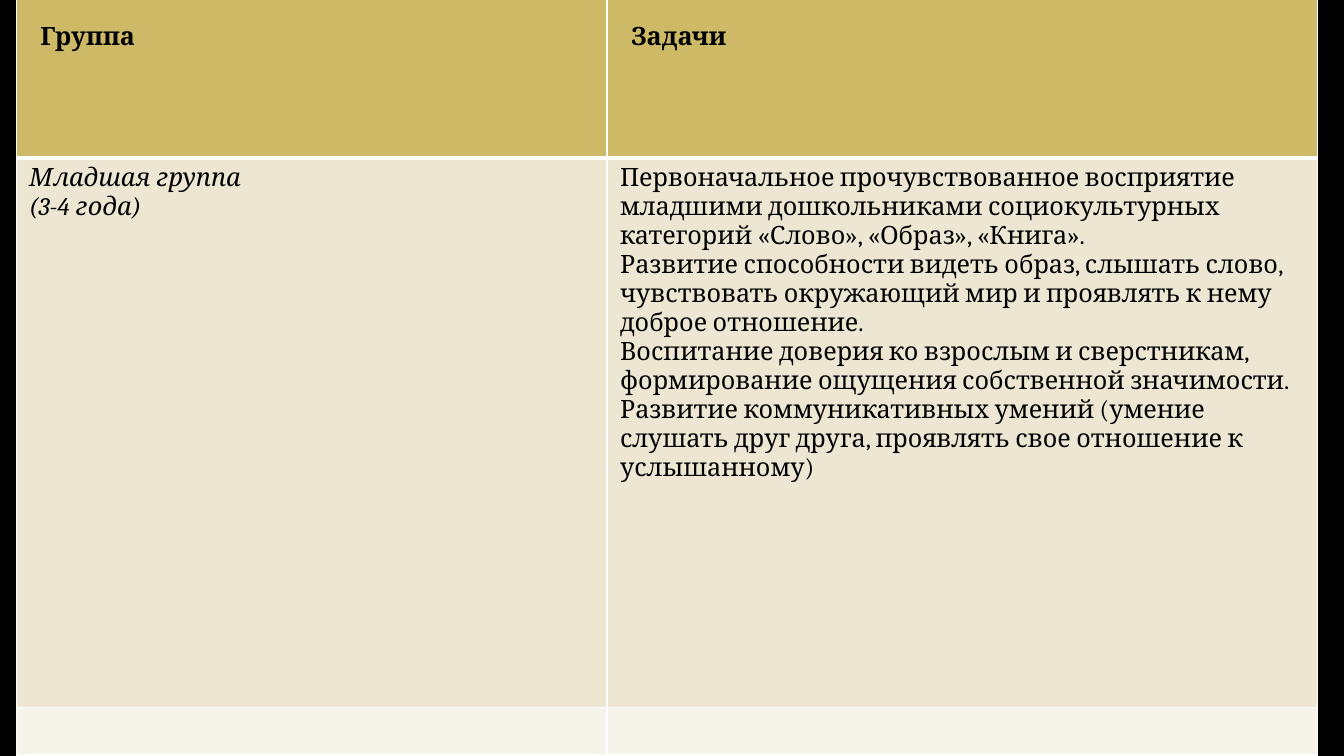
from dataclasses import dataclass

from lxml import etree
from pptx import Presentation
from pptx.dml.color import RGBColor
from pptx.oxml.ns import qn
from pptx.util import Inches, Pt


@dataclass(frozen=True)
class Theme:
    back: str = "000000"
    ink: str = "000000"
    rule: str = "FFFFFF"
    head: str = "CEB966"
    body: str = "EDE6D3"
    foot: str = "F6F3EA"
    font: str = "Cambria"
    size: int = 18
    thin: int = 1
    thick: int = 3


THEME = Theme()
COLS = (5.86, 7.05)
ROWS = (1.68, 5.45, 0.47)

HEADS = ("Группа", "Задачи")
GROUP = ("Младшая группа", "(3-4 года)")
TASKS = (
    "Первоначальное прочувствованное восприятие младшими дошкольниками "
    "социокультурных категорий «Слово», «Образ», «Книга».",
    "Развитие способности видеть образ, слышать слово, чувствовать "
    "окружающий мир и проявлять к нему доброе отношение.",
    "Воспитание доверия ко взрослым и сверстникам, формирование ощущения "
    "собственной значимости.",
    "Развитие коммуникативных умений (умение слушать друг друга, "
    "проявлять свое отношение к услышанному)",
)


def color(code):
    return RGBColor.from_string(code)


def add_rule(cell, side, width):
    """Draw one border of a cell."""
    props = cell._tc.get_or_add_tcPr()
    line = etree.SubElement(props, qn(f"a:ln{side}"), w=str(Pt(width)))
    fill = etree.SubElement(line, qn("a:solidFill"))
    etree.SubElement(fill, qn("a:srgbClr"), val=THEME.rule)


def style_cell(cell, fill, top=THEME.thin, base=THEME.thin):
    """Set the borders, fill and insets of a cell."""
    for side, width in zip("LRTB", (THEME.thin, THEME.thin, top, base)):
        add_rule(cell, side, width)
    cell.fill.solid()
    cell.fill.fore_color.rgb = color(fill)
    cell.margin_left = cell.margin_right = Inches(0.13)
    cell.margin_top = cell.margin_bottom = Inches(0.05)


def write_cell(cell, lines, bold=False, italic=False):
    """Write one paragraph per line."""
    frame = cell.text_frame
    for i, line in enumerate(lines):
        para = frame.add_paragraph() if i else frame.paragraphs[0]
        run = para.add_run()
        run.text = line
        font = run.font
        font.name, font.size = THEME.font, Pt(THEME.size)
        font.bold, font.italic = bold, italic
        font.color.rgb = color(THEME.ink)


def add_grid(slide):
    """Place the empty table with its column and row sizes."""
    grid = slide.shapes.add_table(
        len(ROWS), len(COLS), Inches(0.16), Inches(-0.11),
        Inches(sum(COLS)), Inches(sum(ROWS))).table
    for col, width in zip(grid.columns, COLS):
        col.width = Inches(width)
    for row, height in zip(grid.rows, ROWS):
        row.height = Inches(height)
    return grid


def main():
    deck = Presentation()
    deck.slide_width, deck.slide_height = Inches(13.33), Inches(7.5)
    slide = deck.slides.add_slide(deck.slide_layouts[6])
    slide.background.fill.solid()
    slide.background.fill.fore_color.rgb = color(THEME.back)
    grid = add_grid(slide)

    # Header row, with its text set in and down
    for i, head in enumerate(HEADS):
        cell = grid.cell(0, i)
        style_cell(cell, THEME.head, base=THEME.thick)
        cell.margin_left, cell.margin_top = Inches(0.24), Inches(0.34)
        write_cell(cell, [head], bold=True)

    # Age group and its tasks
    for i, lines in enumerate((GROUP, TASKS)):
        cell = grid.cell(1, i)
        style_cell(cell, THEME.body, top=THEME.thick)
        write_cell(cell, lines, italic=lines is GROUP)

    # Empty closing row
    for i in range(len(COLS)):
        style_cell(grid.cell(2, i), THEME.foot)

    deck.save("out.pptx")


if __name__ == "__main__":
    main()
